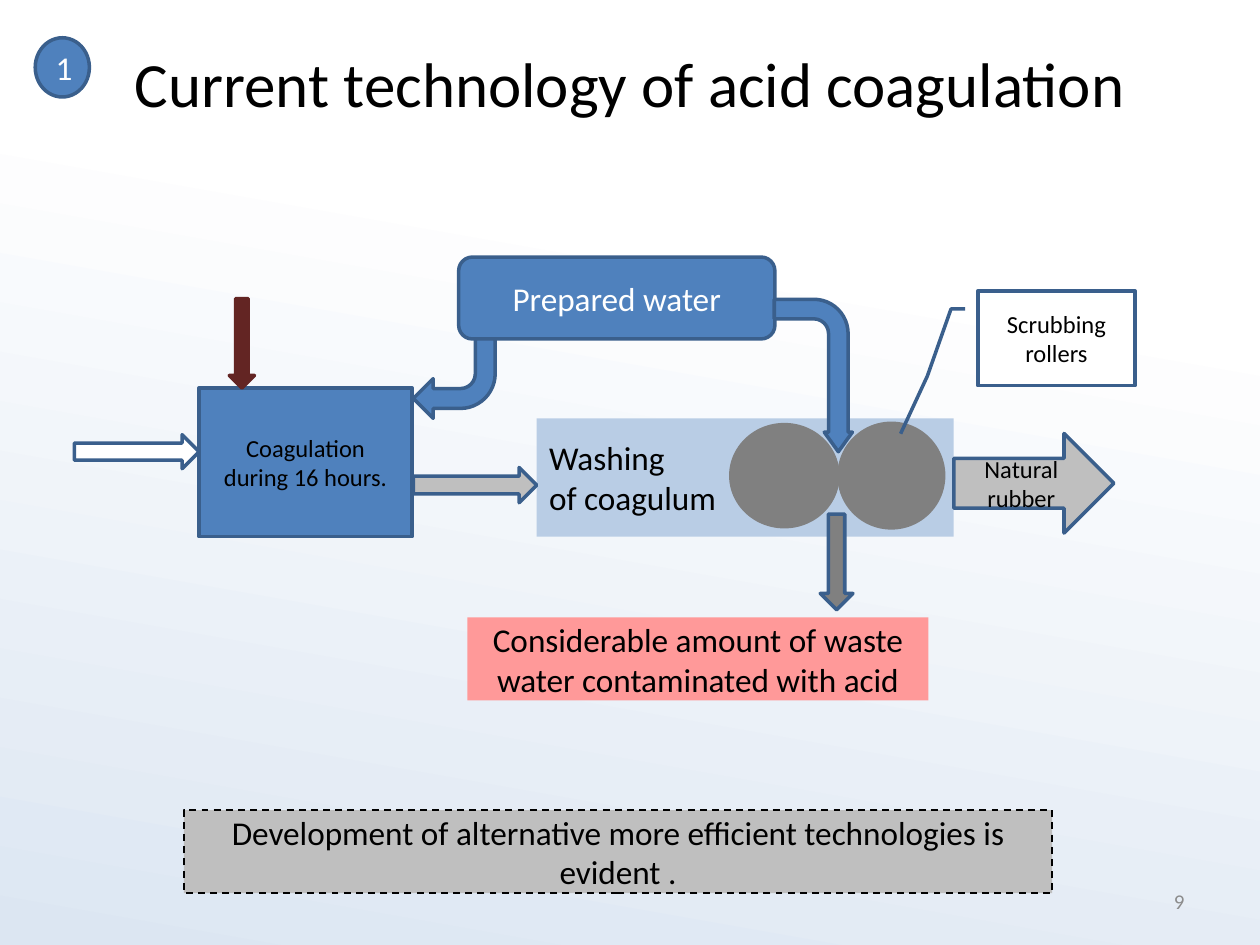
import pptx
from pptx.dml.color import RGBColor
from pptx.enum.dml import MSO_LINE
from pptx.enum.shapes import MSO_SHAPE
from pptx.enum.text import MSO_ANCHOR, PP_ALIGN
from pptx.util import Inches, Pt

FONT = "Calibri"
BLACK = RGBColor(0x00, 0x00, 0x00)
WHITE = RGBColor(0xFF, 0xFF, 0xFF)
BLUE = RGBColor(0x4F, 0x81, 0xBD)
OUTLINE = RGBColor(0x3A, 0x5F, 0x8C)
PALE_BLUE = RGBColor(0xB9, 0xCD, 0xE5)
MIST = RGBColor(0xDC, 0xE6, 0xF2)
MAROON = RGBColor(0x63, 0x25, 0x23)
GRAY = RGBColor(0x80, 0x80, 0x80)
SILVER = RGBColor(0xBF, 0xBF, 0xBF)
PINK = RGBColor(0xFF, 0x99, 0x99)
NUMBER_GRAY = RGBColor(0x8C, 0x8C, 0x8C)

TITLE = "Current technology of acid coagulation"
PAGE_NUMBER = "9"

# Back to front: preset, (left, top, width, height), fill, line colour, options
SHAPES = [
    (MSO_SHAPE.RECTANGLE, (4.26, 3.32, 3.31, 0.94), PALE_BLUE, None,
     dict(lines=["Washing", "of coagulum"], align=PP_ALIGN.LEFT)),
    (MSO_SHAPE.RIGHT_ARROW, (0.59, 3.45, 0.99, 0.27), WHITE, OUTLINE, {}),
    (MSO_SHAPE.RECTANGLE, (1.58, 3.08, 1.69, 1.18), BLUE, OUTLINE,
     dict(lines=["Coagulation during 16 hours."], size=14)),
    (MSO_SHAPE.ROUNDED_RECTANGLE, (3.64, 2.04, 2.51, 0.65), BLUE, OUTLINE,
     dict(lines=["Prepared water"], color=WHITE)),
    (MSO_SHAPE.DOWN_ARROW, (1.82, 2.37, 0.2, 0.71), MAROON, MAROON, {}),
    (MSO_SHAPE.BENT_ARROW, (3.28, 2.69, 0.65, 0.63), BLUE, OUTLINE,
     dict(rotation=180)),
    (MSO_SHAPE.OVAL, (5.8, 3.37, 0.85, 0.81), GRAY, GRAY, {}),
    (MSO_SHAPE.OVAL, (6.66, 3.36, 0.83, 0.83), GRAY, GRAY, {}),
    (MSO_SHAPE.BENT_ARROW, (5.85, 2.67, 1.21, 0.62), BLUE, OUTLINE,
     dict(rotation=90, adjust=[0.25, 0.18, 0.25, 0.44])),
    (MSO_SHAPE.RIGHT_ARROW, (3.28, 3.71, 0.98, 0.28), SILVER, OUTLINE, {}),
    (MSO_SHAPE.DOWN_ARROW, (6.51, 4.08, 0.26, 0.76), GRAY, OUTLINE, {}),
    (MSO_SHAPE.RECTANGLE, (3.71, 4.9, 3.66, 0.66), PINK, None,
     dict(lines=["Considerable amount of waste water contaminated with acid"])),
    (MSO_SHAPE.LINE_CALLOUT_3, (7.76, 2.31, 1.25, 0.75), WHITE, OUTLINE,
     dict(lines=["Scrubbing rollers"], size=14,
          adjust=[0.19, -0.08, 0.19, -0.17, 0.9, -0.32, 1.51, -0.49])),
    (MSO_SHAPE.RIGHT_ARROW, (7.57, 3.44, 1.27, 0.79), SILVER, OUTLINE,
     dict(lines=["Natural rubber"], size=14)),
    (MSO_SHAPE.RECTANGLE, (1.46, 6.43, 6.89, 0.66), SILVER, BLACK,
     dict(lines=["Development of alternative more efficient technologies is evident ."],
          line_width=1, dash=MSO_LINE.DASH)),
    (MSO_SHAPE.OVAL, (0.28, 0.3, 0.43, 0.47), BLUE, OUTLINE,
     dict(lines=["1"], color=WHITE)),
]


def write_text(frame, lines, size, color, align, anchor=MSO_ANCHOR.MIDDLE):
    frame.word_wrap = True
    frame.vertical_anchor = anchor
    frame.text = "\n".join(lines)
    for para in frame.paragraphs:
        para.alignment = align
        para.font.name = FONT
        para.font.size = Pt(size)
        para.font.color.rgb = color


def add_part(page, preset, place, fill, line, lines=(), size=19, color=BLACK,
             align=PP_ALIGN.CENTER, rotation=0, adjust=(), line_width=2, dash=None):
    """Add one diagram shape with its optional text."""
    shape = page.shapes.add_shape(preset, *map(Inches, place))
    shape.shadow.inherit = False
    shape.rotation = rotation
    for index, value in enumerate(adjust):
        shape.adjustments[index] = value
    shape.fill.solid()
    shape.fill.fore_color.rgb = fill
    if line is None:
        shape.line.fill.background()
    else:
        shape.line.color.rgb = line
        shape.line.width = Pt(line_width)
        if dash:
            shape.line.dash_style = dash
    if lines:
        write_text(shape.text_frame, lines, size, color, align)


def paint_background(page):
    fill = page.background.fill
    fill.gradient()
    fill.gradient_angle = 260
    for stop, position, color in zip(fill.gradient_stops, (0.28, 1), (WHITE, MIST)):
        stop.position = position
        stop.color.rgb = color


def main():
    deck = pptx.Presentation()
    deck.slide_width, deck.slide_height = Inches(10), Inches(7.5)
    page = deck.slides.add_slide(deck.slide_layouts[5])
    paint_background(page)

    title = page.shapes.title
    title.left, title.top, title.width, title.height = map(Inches, (0.5, 0.3, 9, 1.09))
    write_text(title.text_frame, [TITLE], 36, BLACK, PP_ALIGN.CENTER, MSO_ANCHOR.TOP)

    number = page.shapes.add_textbox(*map(Inches, (7.17, 6.95, 2.33, 0.4)))
    write_text(number.text_frame, [PAGE_NUMBER], 12, NUMBER_GRAY, PP_ALIGN.RIGHT)

    for preset, place, fill, line, options in SHAPES:
        add_part(page, preset, place, fill, line, **options)

    deck.save("out.pptx")


if __name__ == "__main__":
    main()
